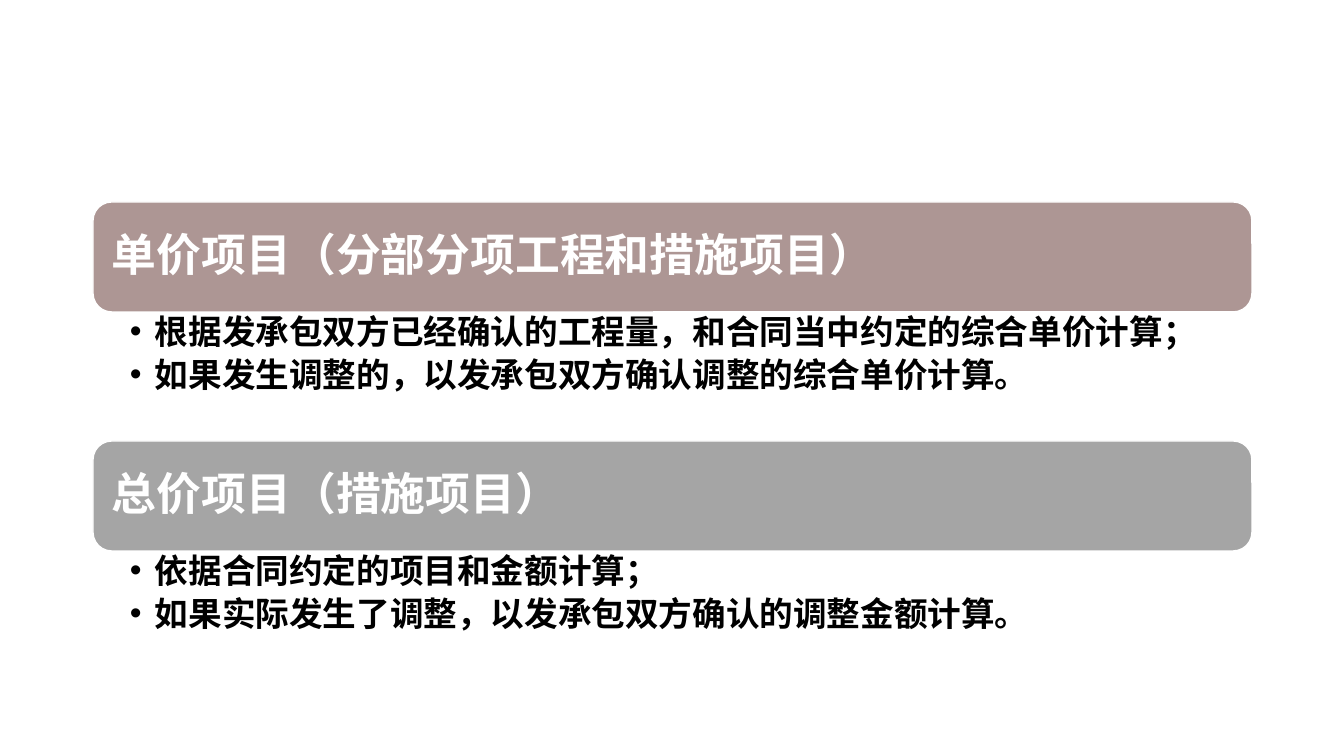
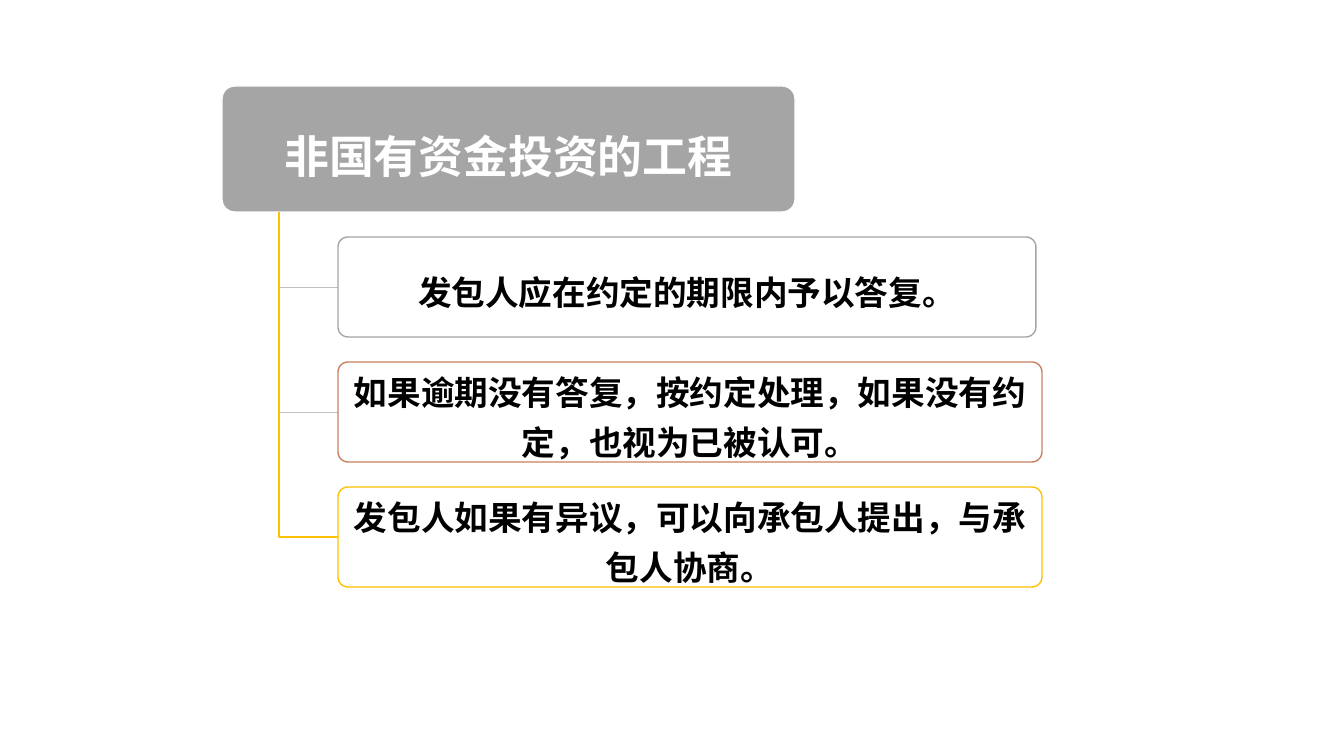
"""Two slides on contract pricing items and on handling of claims in privately funded works."""
from pptx import Presentation
from pptx.dml.color import RGBColor
from pptx.enum.shapes import MSO_SHAPE
from pptx.enum.text import MSO_ANCHOR, MSO_AUTO_SIZE, PP_ALIGN
from pptx.util import Emu, Pt

ROUNDED = MSO_SHAPE.ROUNDED_RECTANGLE
TOP, MIDDLE = MSO_ANCHOR.TOP, MSO_ANCHOR.MIDDLE
LEFT, CENTER = PP_ALIGN.LEFT, PP_ALIGN.CENTER
NO_AUTOFIT = MSO_AUTO_SIZE.NONE
COMPARISON, TITLE_ONLY = 4, 5

PX = 914400 / 100.8
SLIDE_SIZE = (1344, 756)
FONT = "Times New Roman"
HEADING_PT, BODY_PT = 32, 24
WHITE, BLACK, GREY, SILVER = "FFFFFF", "000000", "A5A5A5", "BFBFBF"
MAUVE, COPPER, AMBER = "AD9694", "C8805F", "FFC000"

PRICE_ITEMS = [
    ("单价项目（分部分项工程和措施项目）", MAUVE, [
        "根据发承包双方已经确认的工程量，和合同当中约定的综合单价计算；",
        "如果发生调整的，以发承包双方确认调整的综合单价计算。",
    ]),
    ("总价项目（措施项目）", GREY, [
        "依据合同约定的项目和金额计算；",
        "如果实际发生了调整，以发承包双方确认的调整金额计算。",
    ]),
]
ITEM_X, ITEM_Y, ITEM_W = 93, 202, 1159
BANNER_H, LIST_H = 110, 129
BULLET_INDENT = 25
BULLET_GAP_PT = 4.8

PROJECT = "非国有资金投资的工程"
PROJECT_BOX = (222, 86, 573, 126)
REPLIES = [
    ("发包人应在约定的期限内予以答复。", 698, GREY, SILVER, 0.5),
    ("如果逾期没有答复，按约定处理，如果没有约定，也视为已被认可。", 704, COPPER, SILVER, 0.5),
    ("发包人如果有异议，可以向承包人提出，与承包人协商。", 704, AMBER, AMBER, 1),
]
REPLY_X, REPLY_Y, REPLY_H, REPLY_GAP = 338, 237, 100, 25
TRUNK_X = 279


def px(length):
    return Emu(round(length * PX))


def rgb(value):
    return RGBColor.from_string(value)


def outline(shape, color, width):
    shape.shadow.inherit = False
    shape.line.color.rgb = rgb(color)
    shape.line.width = Pt(width)


def rounded_box(slide, box, fill, line, radius):
    panel = slide.shapes.add_shape(ROUNDED, *map(px, box))
    panel.adjustments[0] = radius
    panel.fill.solid()
    panel.fill.fore_color.rgb = rgb(fill)
    outline(panel, line, 1)
    return panel


def write(holder, lines, size, color, insets, anchor, align, spacing, gap=0):
    frame = holder.text_frame
    frame.word_wrap = True
    frame.auto_size = NO_AUTOFIT
    frame.vertical_anchor = anchor
    frame.margin_left, frame.margin_top, frame.margin_right, frame.margin_bottom = map(px, insets)
    frame.text = "\n".join(lines)
    for paragraph in frame.paragraphs:
        paragraph.alignment = align
        paragraph.line_spacing = spacing
        paragraph.space_before, paragraph.space_after = Pt(0), Pt(gap)
        font = paragraph.font
        font.name, font.size, font.bold = FONT, Pt(size), True
        font.color.rgb = rgb(color)


def place(holder, box):
    holder.left, holder.top, holder.width, holder.height = map(px, box)


def banner(slide, holder, text, box, fill, radius, inset, align, spacing):
    panel = rounded_box(slide, box, fill, WHITE, radius)
    place(holder, box)
    panel.element.addnext(holder.element)
    write(holder, [text], HEADING_PT, WHITE, (inset, 8, inset, 8), MIDDLE, align, spacing)


def bullet_list(holder, lines, box):
    place(holder, box)
    write(holder, lines, BODY_PT, BLACK, (37, 3, 19, 3), TOP, LEFT, 0.9, BULLET_GAP_PT)
    for paragraph in holder.text_frame.paragraphs:
        properties = paragraph._p.get_or_add_pPr()
        properties.set("marL", str(px(BULLET_INDENT)))
        properties.set("indent", str(-px(BULLET_INDENT)))


def elbow(slide, top, middle, color, width):
    builder = slide.shapes.build_freeform(TRUNK_X, top, scale=PX)
    builder.add_line_segments([(TRUNK_X, middle), (REPLY_X, middle)], close=False)
    branch = builder.convert_to_shape()
    branch.fill.background()
    outline(branch, color, width)


def price_slide(deck):
    slide = deck.slides.add_slide(deck.slide_layouts[COMPARISON])
    title, *holders = slide.placeholders
    title.element.getparent().remove(title.element)
    for i, (heading, fill, lines) in enumerate(PRICE_ITEMS):
        y = ITEM_Y + i * (BANNER_H + LIST_H)
        banner(slide, holders[2 * i], heading, (ITEM_X, y, ITEM_W, BANNER_H),
               fill, 0.17, 19, LEFT, 0.9)
        bullet_list(holders[2 * i + 1], lines, (ITEM_X, y + BANNER_H, ITEM_W, LIST_H))


def reply_slide(deck):
    slide = deck.slides.add_slide(deck.slide_layouts[TITLE_ONLY])
    banner(slide, slide.shapes.title, PROJECT, PROJECT_BOX, GREY, 0.1, 10, CENTER, 1.25)
    trunk_top = PROJECT_BOX[1] + PROJECT_BOX[3]
    for i, (text, width, border, branch, weight) in enumerate(REPLIES):
        y = REPLY_Y + i * (REPLY_H + REPLY_GAP)
        elbow(slide, trunk_top, y + REPLY_H // 2, branch, weight)
        card = rounded_box(slide, (REPLY_X, y, width, REPLY_H), WHITE, border, 0.1)
        write(card, [text], BODY_PT, BLACK, (8, 6, 8, 6), MIDDLE, CENTER, 1.25)


def main():
    deck = Presentation()
    deck.slide_width, deck.slide_height = map(px, SLIDE_SIZE)
    price_slide(deck)
    reply_slide(deck)
    deck.save("out.pptx")


if __name__ == "__main__":
    main()
